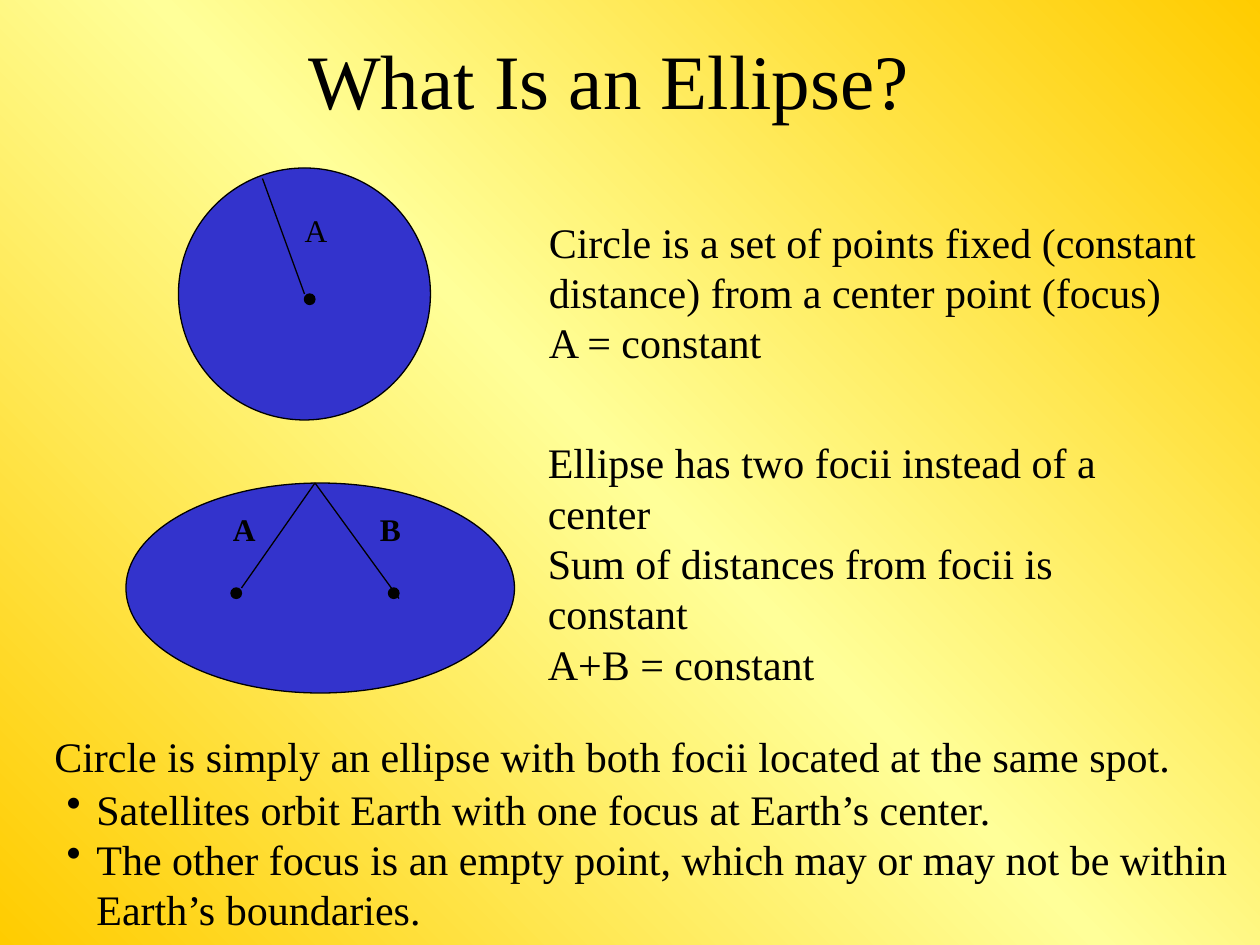
from copy import deepcopy
from dataclasses import dataclass

from lxml import etree
from pptx import Presentation
from pptx.dml.color import RGBColor
from pptx.enum.shapes import MSO_CONNECTOR, MSO_SHAPE
from pptx.enum.text import MSO_ANCHOR, MSO_AUTO_SIZE, PP_ALIGN
from pptx.oxml.ns import qn
from pptx.util import Pt

OVAL = MSO_SHAPE.OVAL
STRAIGHT = MSO_CONNECTOR.STRAIGHT
MIDDLE = MSO_ANCHOR.MIDDLE
GROW = MSO_AUTO_SIZE.SHAPE_TO_FIT_TEXT
CENTER = PP_ALIGN.CENTER


@dataclass(frozen=True)
class Theme:
    font: str = "Times New Roman"
    ink: RGBColor = RGBColor(0, 0, 0)
    oval: RGBColor = RGBColor(0x33, 0x33, 0xCC)
    edge: RGBColor = RGBColor(0xFF, 0xCC, 0x00)
    glow: RGBColor = RGBColor(0xFF, 0xFF, 0x99)
    title_size: int = 44
    body_size: int = 24
    label_size: int = 18
    line_width: float = 0.75
    bullet_indent: int = 17
    dot_size: int = 6


class SlideBuilder:
    """Draws on the slide, or in the group started last."""

    def __init__(self, page, theme):
        self.page = page
        self.theme = theme
        self.shapes = page.shapes

    def start_group(self):
        self.shapes = self.page.shapes.add_group_shape().shapes

    def end_group(self):
        self.shapes = self.page.shapes

    def background(self):
        """Diagonal gradient, lightest along the middle."""
        fill = self.page.background.fill
        fill.gradient()
        fill.gradient_angle = 45
        stop_list = next(self.page.element.iter(qn("a:gsLst")))
        stop_list.append(deepcopy(stop_list[-1]))
        colors = (self.theme.edge, self.theme.glow, self.theme.edge)
        for stop, position, color in zip(fill.gradient_stops, (0, 0.5, 1), colors):
            stop.position = position
            stop.color.rgb = color

    def style(self, para, size, bold=False):
        for span in para.runs:
            font = span.font
            font.name = self.theme.font
            font.size = Pt(size)
            font.bold = bold
            font.color.rgb = self.theme.ink

    def title(self, text, left, top, width, height):
        box = self.page.shapes.title
        box.left, box.top, box.width, box.height = map(Pt, (left, top, width, height))
        frame = box.text_frame
        frame.text = text
        frame.vertical_anchor = MIDDLE
        frame.paragraphs[0].alignment = CENTER
        self.style(frame.paragraphs[0], self.theme.title_size)

    def oval(self, left, top, width, height, color):
        shape = self.shapes.add_shape(OVAL, Pt(left), Pt(top), Pt(width), Pt(height))
        shape.shadow.inherit = False
        shape.fill.solid()
        shape.fill.fore_color.rgb = color
        shape.line.color.rgb = self.theme.ink
        shape.line.width = Pt(self.theme.line_width)

    def focus(self, left, top):
        size = self.theme.dot_size
        self.oval(left, top, size, size, self.theme.ink)

    def line(self, start, end):
        line = self.shapes.add_connector(STRAIGHT, *map(Pt, (*start, *end)))
        line.line.color.rgb = self.theme.ink
        line.line.width = Pt(self.theme.line_width)
        properties = line._element.spPr
        etree.SubElement(properties, qn("a:effectLst"))

    def text(self, lines, left, top, width, height, size=None, bold=False,
             wrap=True, bullets=False):
        box = self.shapes.add_textbox(Pt(left), Pt(top), Pt(width), Pt(height))
        frame = box.text_frame
        frame.text = "\n".join(lines)
        frame.word_wrap = wrap
        frame.auto_size = GROW
        for para in frame.paragraphs:
            if bullets:
                self.bullet(para)
            self.style(para, size or self.theme.body_size, bold)

    def bullet(self, para):
        indent = Pt(self.theme.bullet_indent)
        properties = para._p.get_or_add_pPr()
        properties.set("marL", str(indent))
        properties.set("indent", str(-indent))
        etree.SubElement(properties, qn("a:buChar"), char="•")

    def label(self, letter, left, top, bold=False):
        self.text([letter], left, top, 27, 29, self.theme.label_size, bold, wrap=False)


def draw_ellipse(builder):
    apex = (180, 276)
    builder.start_group()
    builder.oval(72, 276, 222, 120, builder.theme.oval)
    for left in (132, 222):
        builder.focus(left, 336)
    for focus in ((138, 336), (228, 342)):
        builder.line(focus, apex)
    for letter, left in (("A", 126), ("B", 210)):
        builder.label(letter, left, 288, bold=True)
    builder.text(["Ellipse has two focii instead of a center",
                  "Sum of distances from focii is constant",
                  "A+B = constant"], 306, 246, 355, 153)
    builder.end_group()


def draw_circle(builder):
    center = (174, 168)
    builder.start_group()
    builder.oval(102, 96, 144, 144, builder.theme.oval)
    builder.focus(*center)
    builder.text(["Circle is a set of points fixed (constant distance) "
                  "from a center point (focus)",
                  "A = constant"], 306.5, 120, 395, 94)
    builder.line(center, (150, 102))
    builder.label("A", 167, 117)
    builder.end_group()


def main():
    deck = Presentation()
    deck.slide_width, deck.slide_height = Pt(720), Pt(540)
    page = deck.slides.add_slide(deck.slide_layouts[5])
    builder = SlideBuilder(page, Theme())
    builder.background()
    builder.title("What Is an Ellipse?", 42, 0, 612, 90)
    draw_ellipse(builder)
    builder.text(["Circle is simply an ellipse with both focii located at the same spot."],
                 24, 414, 657, 36, wrap=False)
    draw_circle(builder)
    builder.text(["Satellites orbit Earth with one focus at Earth’s center.",
                  "The other focus is an empty point, which may or may not be "
                  "within Earth’s boundaries."], 31, 444, 689, 94, bullets=True)
    deck.save("out.pptx")


if __name__ == "__main__":
    main()
